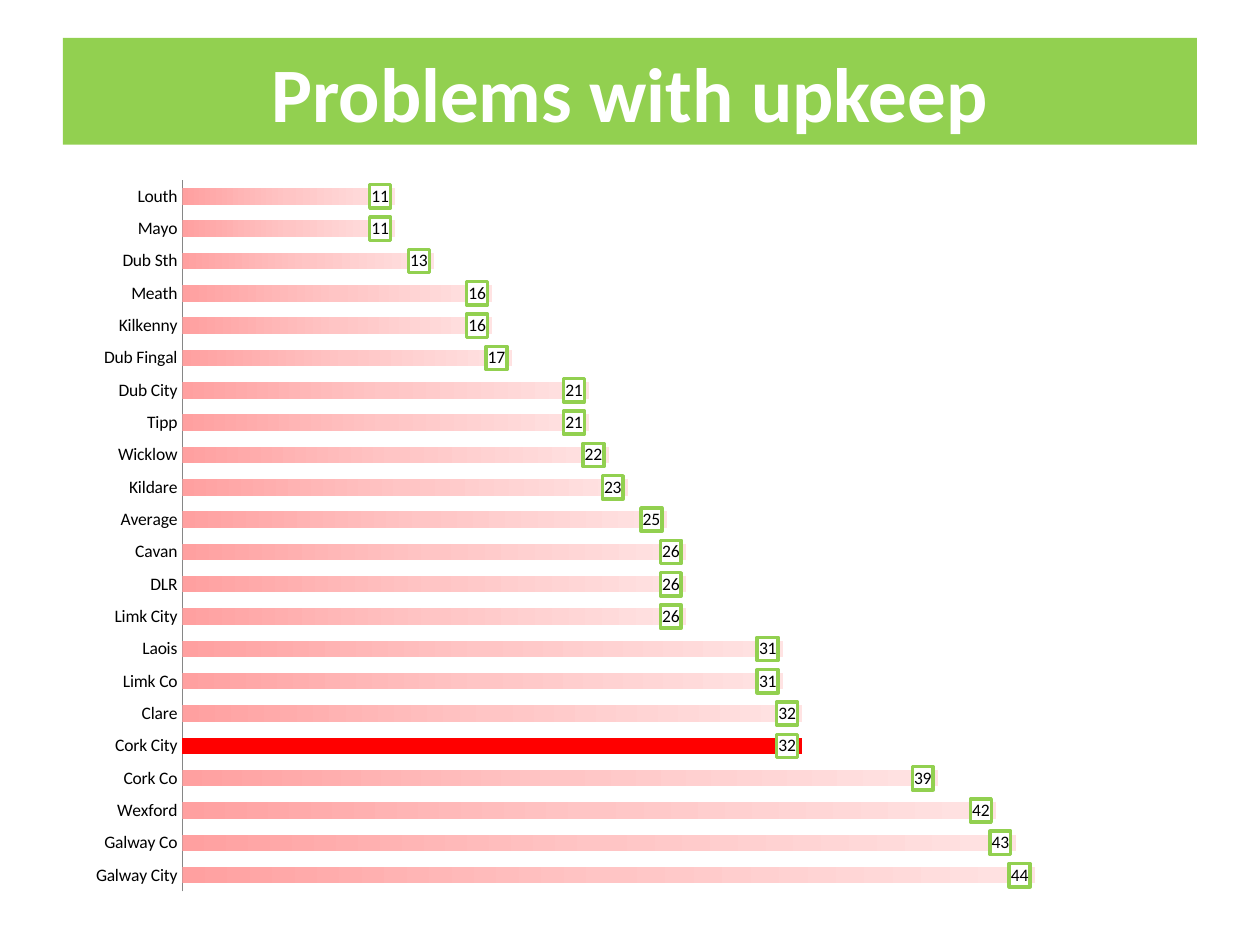
from copy import deepcopy
from dataclasses import dataclass

from lxml.etree import SubElement
from pptx import Presentation
from pptx.chart.data import CategoryChartData
from pptx.dml.color import RGBColor
from pptx.enum.chart import XL_CHART_TYPE, XL_LABEL_POSITION, XL_TICK_MARK
from pptx.enum.shapes import MSO_SHAPE
from pptx.enum.text import MSO_ANCHOR, PP_ALIGN
from pptx.oxml import parse_xml
from pptx.oxml.ns import nsdecls, qn
from pptx.util import Inches, Pt


@dataclass(frozen=True)
class Theme:
    """Colours, font and type sizes of the slide."""

    font: str = "Calibri"
    title_size: int = 44
    chart_size: int = 10
    accent: str = "92D050"
    light: str = "FFFFFF"
    dark: str = "000000"
    axis: str = "868686"
    highlight: str = "FF0000"
    bar_stops: tuple = ("FFA0A0", "FFC5C5", "FFE3E3")


THEME = Theme()
WIDTH, HEIGHT = Inches(10), Inches(7.5)
TITLE_BOX = (0.05, 0.04, 0.9, 0.113)
CHART_BOX = (0.059, 0.175, 0.874, 0.784)
PLOT_BOX = {"x": 0.098, "y": 0.02, "w": 0.88, "h": 0.96}
HIGHLIGHTED = "Cork City"
UPKEEP = {
    "Galway City": 44, "Galway Co": 43, "Wexford": 42, "Cork Co": 39,
    "Cork City": 32, "Clare": 32, "Limk Co": 31, "Laois": 31,
    "Limk City": 26, "DLR": 26, "Cavan": 26, "Average": 25,
    "Kildare": 23, "Wicklow": 22, "Tipp": 21, "Dub City": 21,
    "Dub Fingal": 17, "Kilkenny": 16, "Meath": 16, "Dub Sth": 13,
    "Mayo": 11, "Louth": 11,
}


def place(box):
    """Turn shares of the slide's size into lengths."""
    return [round(share * side) for share, side in zip(box, (WIDTH, HEIGHT) * 2)]


def set_font(font, size, color, bold=False):
    """Apply the theme font with a size and colour."""
    font.name, font.size, font.bold = THEME.font, Pt(size), bold
    font.color.rgb = RGBColor.from_string(color)


def add_title(slide, text):
    """Add the title banner."""
    banner = slide.shapes.add_shape(MSO_SHAPE.RECTANGLE, *place(TITLE_BOX))
    banner.shadow.inherit = False
    banner.fill.solid()
    banner.fill.fore_color.rgb = RGBColor.from_string(THEME.accent)
    banner.line.fill.background()
    banner.text_frame.vertical_anchor = MSO_ANCHOR.MIDDLE
    paragraph = banner.text_frame.paragraphs[0]
    paragraph.text = text
    paragraph.alignment = PP_ALIGN.CENTER
    set_font(paragraph.font, THEME.title_size, THEME.light, bold=True)


def set_plot_layout(chart):
    """Fix the inner plot area as shares of the chart."""
    plot_area = chart._chartSpace.chart.plotArea
    for layout in plot_area.findall(qn("c:layout")):
        plot_area.remove(layout)
    layout = parse_xml(f"<c:layout {nsdecls('c')}><c:manualLayout/></c:layout>")
    settings = {"layoutTarget": "inner", "xMode": "edge", "yMode": "edge", **PLOT_BOX}
    for name, value in settings.items():
        SubElement(layout[0], qn(f"c:{name}")).set("val", str(value))
    plot_area.insert(0, layout)


def style_axes(chart):
    """Show category names on a thin line and hide the value axis."""
    category_axis, value_axis = chart.category_axis, chart.value_axis
    category_axis.major_tick_mark = XL_TICK_MARK.NONE
    category_axis.format.line.color.rgb = RGBColor.from_string(THEME.axis)
    category_axis.format.line.width = Pt(0.75)
    value_axis.visible = False
    value_axis.has_major_gridlines = False
    value_axis.minimum_scale, value_axis.maximum_scale = 0, 50


def fill_bars(series):
    """Fill the bars with a gradient and mark the highlighted one."""
    fill = series.format.fill
    fill.gradient()
    fill.gradient_angle = 0
    stop_list = series._element.find(".//" + qn("a:gsLst"))
    stop_list.append(deepcopy(stop_list[-1]))
    for index, (stop, color) in enumerate(zip(fill.gradient_stops, THEME.bar_stops)):
        stop.position = index / 2
        stop.color.rgb = RGBColor.from_string(color)
    point = series.points[list(UPKEEP).index(HIGHLIGHTED)]
    point.format.fill.solid()
    point.format.fill.fore_color.rgb = RGBColor.from_string(THEME.highlight)


def add_labels(series):
    """Show values in framed boxes at the inner end of the bars."""
    labels = series.data_labels
    labels.show_value = True
    labels.number_format, labels.number_format_is_linked = "#,##0", False
    labels.position = XL_LABEL_POSITION.INSIDE_END
    set_font(labels.font, THEME.chart_size, THEME.dark)
    frame = parse_xml(
        f"<c:spPr {nsdecls('c', 'a')}>"
        f'<a:solidFill><a:srgbClr val="{THEME.light}"/></a:solidFill>'
        f'<a:ln w="{Pt(2)}"><a:solidFill><a:srgbClr val="{THEME.accent}"/>'
        "</a:solidFill></a:ln></c:spPr>"
    )
    labels._element.find(qn("c:txPr")).addprevious(frame)


def add_bar_chart(slide):
    """Add the chart of upkeep problems by area."""
    data = CategoryChartData()
    data.categories = list(UPKEEP)
    data.add_series("Series 1", list(UPKEEP.values()))
    chart = slide.shapes.add_chart(
        XL_CHART_TYPE.BAR_STACKED, *place(CHART_BOX), data
    ).chart
    chart.has_legend = chart.has_title = False
    set_font(chart.font, THEME.chart_size, THEME.dark)
    plot = chart.plots[0]
    plot.gap_width, plot.overlap, plot.vary_by_categories = 95, 100, False
    set_plot_layout(chart)
    style_axes(chart)
    fill_bars(plot.series[0])
    add_labels(plot.series[0])


def main():
    """Build and save the slide."""
    presentation = Presentation()
    presentation.slide_width, presentation.slide_height = WIDTH, HEIGHT
    slide = presentation.slides.add_slide(presentation.slide_layouts[6])
    add_title(slide, "Problems with upkeep")
    add_bar_chart(slide)
    presentation.save("out.pptx")


if __name__ == "__main__":
    main()
